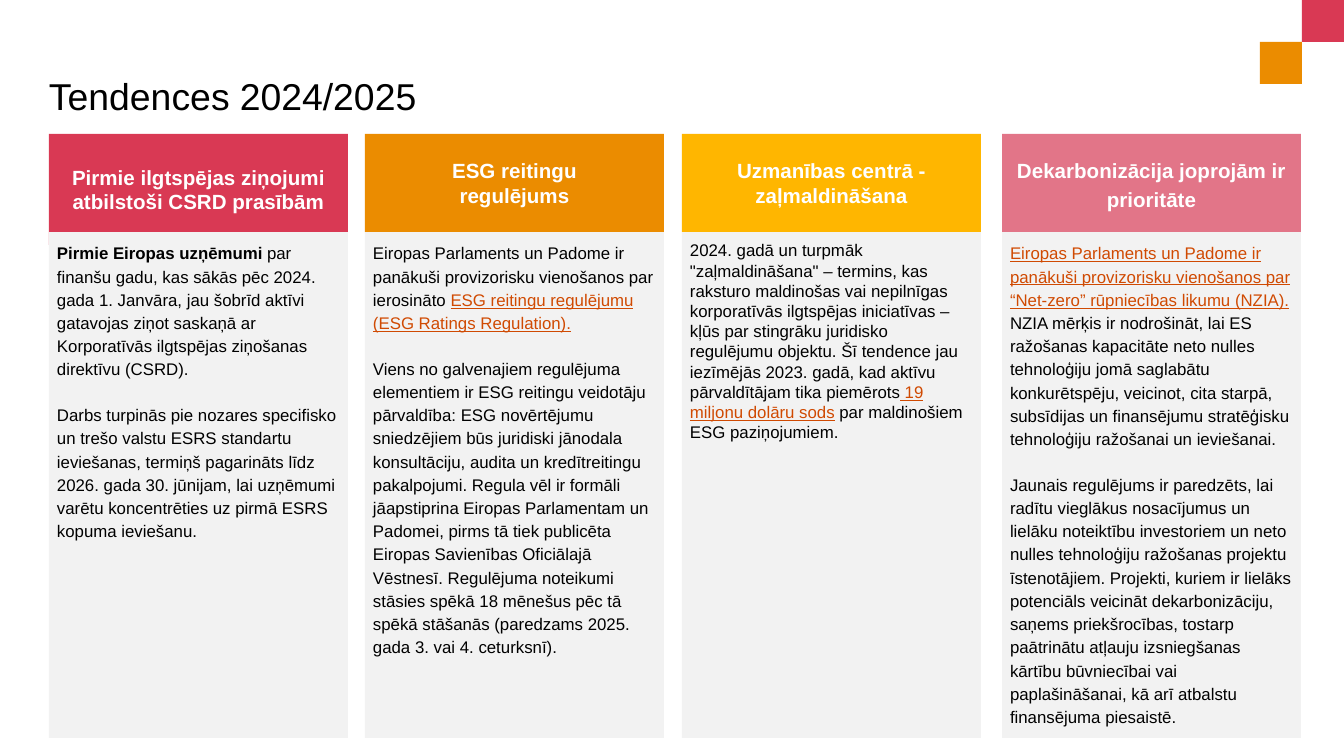
from pptx import Presentation
from pptx.dml.color import RGBColor
from pptx.enum.shapes import MSO_SHAPE
from pptx.enum.text import MSO_ANCHOR, PP_ALIGN
from pptx.util import Pt

RED = RGBColor(0xD9, 0x39, 0x54)
ORANGE = RGBColor(0xEB, 0x8C, 0x00)
YELLOW = RGBColor(0xFF, 0xB6, 0x00)
PINK = RGBColor(0xE2, 0x75, 0x88)
GRAY = RGBColor(0xF2, 0xF2, 0xF2)
LINK = RGBColor(0xD0, 0x4A, 0x02)
WHITE = RGBColor(0xFF, 0xFF, 0xFF)
BLACK = RGBColor(0, 0, 0)

PLAIN = {}
BOLD = {"bold": True}
LINKED = {"color": LINK, "underline": True}

TITLE = [("Tendences", 20, "Arial"), (" ", 24, "Cambria"), ("2024/2025", 20, "Arial")]

TOPICS = [
    {
        "left": 49, "color": RED, "heading_height": 111,
        "heading": ["Pirmie ilgtspējas ziņojumi atbilstoši CSRD prasībām"],
        "body": [
            [("Pirmie Eiropas uzņēmumi ", BOLD),
             ("par finanšu gadu, kas sākās pēc 2024. gada 1. Janvāra, jau šobrīd aktīvi "
              "gatavojas ziņot saskaņā ar Korporatīvās ilgtspējas ziņošanas direktīvu (CSRD).", PLAIN)],
            [("Darbs turpinās pie nozares specifisko un trešo valstu ESRS standartu ieviešanas, "
              "termiņš pagarināts līdz 2026. gada 30. jūnijam, lai uzņēmumi varētu koncentrēties "
              "uz pirmā ESRS kopuma ieviešanu.", PLAIN)],
        ],
    },
    {
        "left": 365, "color": ORANGE,
        "heading": ["ESG reitingu", "regulējums"],
        "body": [
            [("Eiropas Parlaments un Padome ir panākuši provizorisku vienošanos par ierosināto ", PLAIN),
             ("ESG reitingu regulējumu (ESG Ratings Regulation).", LINKED)],
            [("Viens no galvenajiem regulējuma elementiem ir ESG reitingu veidotāju pārvaldība: "
              "ESG novērtējumu sniedzējiem būs juridiski jānodala konsultāciju, audita un "
              "kredītreitingu pakalpojumi. Regula vēl ir formāli jāapstiprina Eiropas Parlamentam "
              "un Padomei, pirms tā tiek publicēta Eiropas Savienības Oficiālajā Vēstnesī. "
              "Regulējuma noteikumi stāsies spēkā 18 mēnešus pēc tā spēkā stāšanās "
              "(paredzams 2025. gada 3. vai 4. ceturksnī).", PLAIN)],
        ],
    },
    {
        "left": 682, "color": YELLOW, "body_spacing": 1.0,
        "heading": ["Uzmanības centrā - zaļmaldināšana"],
        "body": [
            [("2024. gadā un turpmāk \"zaļmaldināšana\" – termins, kas raksturo maldinošas vai "
              "nepilnīgas korporatīvās ilgtspējas iniciatīvas – kļūs par stingrāku juridisko "
              "regulējumu objektu. Šī tendence jau iezīmējās 2023. gadā, kad aktīvu "
              "pārvaldītājam tika piemērots", PLAIN),
             (" 19 miljonu dolāru sods", LINKED),
             (" par maldinošiem ESG paziņojumiem.", PLAIN)],
        ],
    },
    {
        "left": 1002, "color": PINK, "heading_spacing": 1.15, "heading_gap": 12,
        "heading": ["Dekarbonizācija joprojām ir prioritāte"],
        "body": [
            [("Eiropas Parlaments un Padome ir panākuši provizorisku vienošanos par "
              "“Net-zero” rūpniecības likumu (NZIA). ", LINKED),
             ("NZIA mērķis ir nodrošināt, lai ES ražošanas kapacitāte neto nulles tehnoloģiju "
              "jomā saglabātu konkurētspēju, veicinot, cita starpā, subsīdijas un finansējumu "
              "stratēģisku tehnoloģiju ražošanai un ieviešanai.", PLAIN)],
            [("Jaunais regulējums ir paredzēts, lai radītu vieglākus nosacījumus un lielāku "
              "noteiktību investoriem un neto nulles tehnoloģiju ražošanas projektu īstenotājiem. "
              "Projekti, kuriem ir lielāks potenciāls veicināt dekarbonizāciju, saņems "
              "priekšrocības, tostarp paātrinātu atļauju izsniegšanas kārtību būvniecībai vai "
              "paplašināšanai, kā arī atbalstu finansējuma piesaistē.", PLAIN)],
        ],
    },
]

SLIDE_WIDTH, SLIDE_HEIGHT = 1344, 756
CORNER = 42
COLUMN_WIDTH = 299
HEADING_TOP, HEADING_HEIGHT = 134, 98
BODY_TOP, BODY_HEIGHT = HEADING_TOP + HEADING_HEIGHT, 506


def px(length):
    return round(length * 914400 / 134.4)


def add_block(left, top, width, height, color):
    block = slide.shapes.add_shape(MSO_SHAPE.RECTANGLE, px(left), px(top), px(width), px(height))
    block.shadow.inherit = False
    block.fill.solid()
    block.fill.fore_color.rgb = color
    block.line.fill.background()
    return block


def prepare_frame(shape, anchor, inset):
    frame = shape.text_frame
    frame.word_wrap = True
    frame.vertical_anchor = anchor
    frame.margin_left = frame.margin_right = px(inset)
    frame.margin_top = frame.margin_bottom = px(inset)
    return frame


def add_paragraph(frame, index, align, spacing=1.0, before=0, after=0):
    paragraph = frame.add_paragraph() if index else frame.paragraphs[0]
    paragraph.alignment = align
    paragraph.line_spacing = spacing
    paragraph.space_before = Pt(before)
    paragraph.space_after = Pt(after)
    return paragraph


def add_run(paragraph, text, size, color=BLACK, bold=False, underline=False, font="Arial"):
    run = paragraph.add_run()
    run.text = text
    run.font.name = font
    run.font.size = Pt(size)
    run.font.color.rgb = color
    run.font.bold = bold
    run.font.underline = underline


presentation = Presentation()
presentation.slide_width = px(SLIDE_WIDTH)
presentation.slide_height = px(SLIDE_HEIGHT)
slide = presentation.slides.add_slide(presentation.slide_layouts[6])

for step, color in enumerate([RED, ORANGE]):
    add_block(SLIDE_WIDTH - CORNER * (step + 1), CORNER * step, CORNER, CORNER, color)

title = slide.shapes.add_textbox(px(49), px(17), px(1246), px(153))
title_frame = prepare_frame(title, MSO_ANCHOR.TOP, 0)
title_line = add_paragraph(title_frame, 0, PP_ALIGN.JUSTIFY, 1.91, after=15)
for text, size, font in TITLE:
    add_run(title_line, text, size, font=font)

for topic in TOPICS:
    heading = add_block(topic["left"], HEADING_TOP, COLUMN_WIDTH,
                        topic.get("heading_height", HEADING_HEIGHT), topic["color"])
    heading_frame = prepare_frame(heading, MSO_ANCHOR.MIDDLE, 9)
    gap = topic.get("heading_gap", 0)
    for index, text in enumerate(topic["heading"]):
        line = add_paragraph(heading_frame, index, PP_ALIGN.CENTER,
                             topic.get("heading_spacing", 1.0), gap, gap)
        add_run(line, text, 11, WHITE, bold=True)

    body = add_block(topic["left"], BODY_TOP, COLUMN_WIDTH, BODY_HEIGHT, GRAY)
    body_frame = prepare_frame(body, MSO_ANCHOR.TOP, 8)
    for index, runs in enumerate(topic["body"]):
        paragraph = add_paragraph(body_frame, index, PP_ALIGN.LEFT,
                                  topic.get("body_spacing", 1.15), 12 if index else 0)
        for text, style in runs:
            add_run(paragraph, text, 9, **style)

presentation.save("out.pptx")
